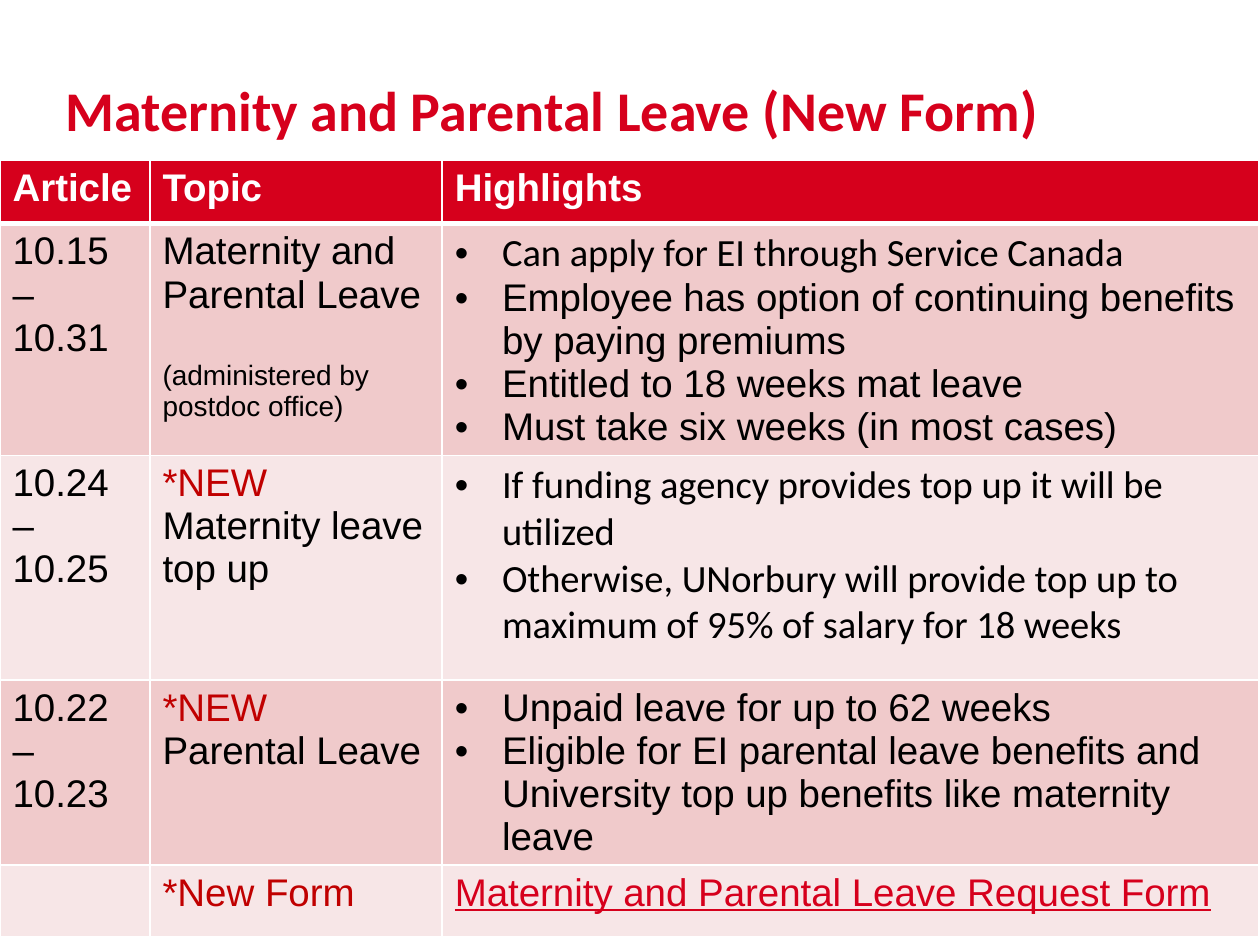
import pptx
import pptx.dml.color
import pptx.enum.text
import pptx.oxml
import pptx.oxml.ns
import pptx.util
from dataclasses import dataclass

Pt = pptx.util.Pt


@dataclass(frozen=True)
class Theme:
    red: str = "D6001C"
    dark_red: str = "C00000"
    black: str = "000000"
    white: str = "FFFFFF"
    bands: tuple = ("F0CACB", "F7E6E7")
    body_font: str = "Arial"
    accent_font: str = "Calibri"
    title_size: int = 32
    body_size: int = 22
    note_size: int = 16


theme = Theme()
rgb = pptx.dml.color.RGBColor.from_string


def write(frame, text, font=theme.body_font, size=theme.body_size, color=theme.black,
          bold=False, underline=False, bullet=False, before=0, spacing=None):
    """Add one formatted paragraph, using the first one while it is empty."""
    first = frame.paragraphs[0]
    paragraph = frame.add_paragraph() if first.runs else first
    paragraph.alignment = pptx.enum.text.PP_ALIGN.LEFT
    paragraph.space_before = Pt(before)
    if spacing:
        paragraph.line_spacing = spacing
    run = paragraph.add_run()
    run.text = text
    run.font.name, run.font.size = font, Pt(size)
    run.font.bold, run.font.underline = bold, underline
    run.font.color.rgb = rgb(color)
    if bullet:
        properties = paragraph._p.get_or_add_pPr()
        properties.set("marL", str(Pt(27)))
        properties.set("indent", str(-Pt(27)))
        for mark in (f'<a:buClr {{}}><a:srgbClr val="{theme.black}"/></a:buClr>',
                     '<a:buFont {} typeface="Arial"/>', '<a:buChar {} char="•"/>'):
            properties.append(pptx.oxml.parse_xml(mark.format(pptx.oxml.ns.nsdecls("a"))))


def paint(cell, fill, bottom=1):
    """Fill a cell and give it white borders; bottom is that line's width."""
    properties = cell._tc.get_or_add_tcPr()
    for side, width in (("L", 1), ("R", 1), ("T", 1), ("B", bottom)):
        properties.append(pptx.oxml.parse_xml(
            f'<a:ln{side} {pptx.oxml.ns.nsdecls("a")} w="{Pt(width)}"><a:solidFill>'
            f'<a:srgbClr val="{theme.white}"/></a:solidFill></a:ln{side}>'))
    cell.fill.solid()
    cell.fill.fore_color.rgb = rgb(fill)


deck = pptx.Presentation()
deck.slide_width, deck.slide_height = Pt(720), Pt(540)
slide = deck.slides.add_slide(deck.slide_layouts[5])

title = slide.shapes.title
title.left, title.top, title.width, title.height = Pt(30.2), Pt(22.3), Pt(579), Pt(77.8)
title.text_frame.vertical_anchor = pptx.enum.text.MSO_ANCHOR.MIDDLE
write(title.text_frame, "Maternity and Parental Leave (New Form)", font=theme.accent_font,
      size=theme.title_size, color=theme.red, bold=True, spacing=1.06)

# Each cell is a list of (text, format) paragraphs.
header = dict(color=theme.white, bold=True)
new = dict(color=theme.dark_red)
point = dict(bullet=True)
accent_point = dict(bullet=True, font=theme.accent_font)
rows = [
    [[("Article", header)], [("Topic", header)], [("Highlights", header)]],
    [[("10.15 – 10.31", {})],
     [("Maternity and Parental Leave", {}),
      ("(administered by postdoc office)", dict(size=theme.note_size, before=25))],
     [("Can apply for EI through Service Canada", accent_point),
      ("Employee has option of continuing benefits by paying premiums", point),
      ("Entitled to 18 weeks mat leave", point),
      ("Must take six weeks (in most cases)", point)]],
    [[("10.24 – 10.25", {})],
     [("*NEW", new), ("Maternity leave top up", {})],
     [("If funding agency provides top up it will be utilized", accent_point),
      ("Otherwise, UNorbury will provide top up to maximum of 95% of salary for 18 weeks",
       accent_point)]],
    [[("10.22 – 10.23", {})],
     [("*NEW", new), ("Parental Leave", {})],
     [("Unpaid leave for up to 62 weeks", point),
      ("Eligible for EI parental leave benefits and University top up benefits "
       "like maternity leave", point)]],
    [[], [("*New Form", new)],
     [("Maternity and Parental Leave Request Form", dict(color=theme.red, underline=True))]],
]
column_widths = (85.7, 167, 466.6)
row_heights = (36.5, 132.5, 128.2, 105.3, 41)

leave_table = slide.shapes.add_table(
    len(rows), len(column_widths), Pt(0), Pt(91.4),
    Pt(sum(column_widths)), Pt(sum(row_heights))).table
for column, width in zip(leave_table.columns, column_widths):
    column.width = Pt(width)
for r, (height, row) in enumerate(zip(row_heights, rows)):
    leave_table.rows[r].height = Pt(height)
    for c, paragraphs in enumerate(row):
        cell = leave_table.cell(r, c)
        if r == 0:
            paint(cell, theme.red, bottom=3)
        else:
            paint(cell, theme.bands[(r - 1) % 2], bottom=1)
        for text, style in paragraphs:
            write(cell.text_frame, text, **style)

deck.save("out.pptx")
